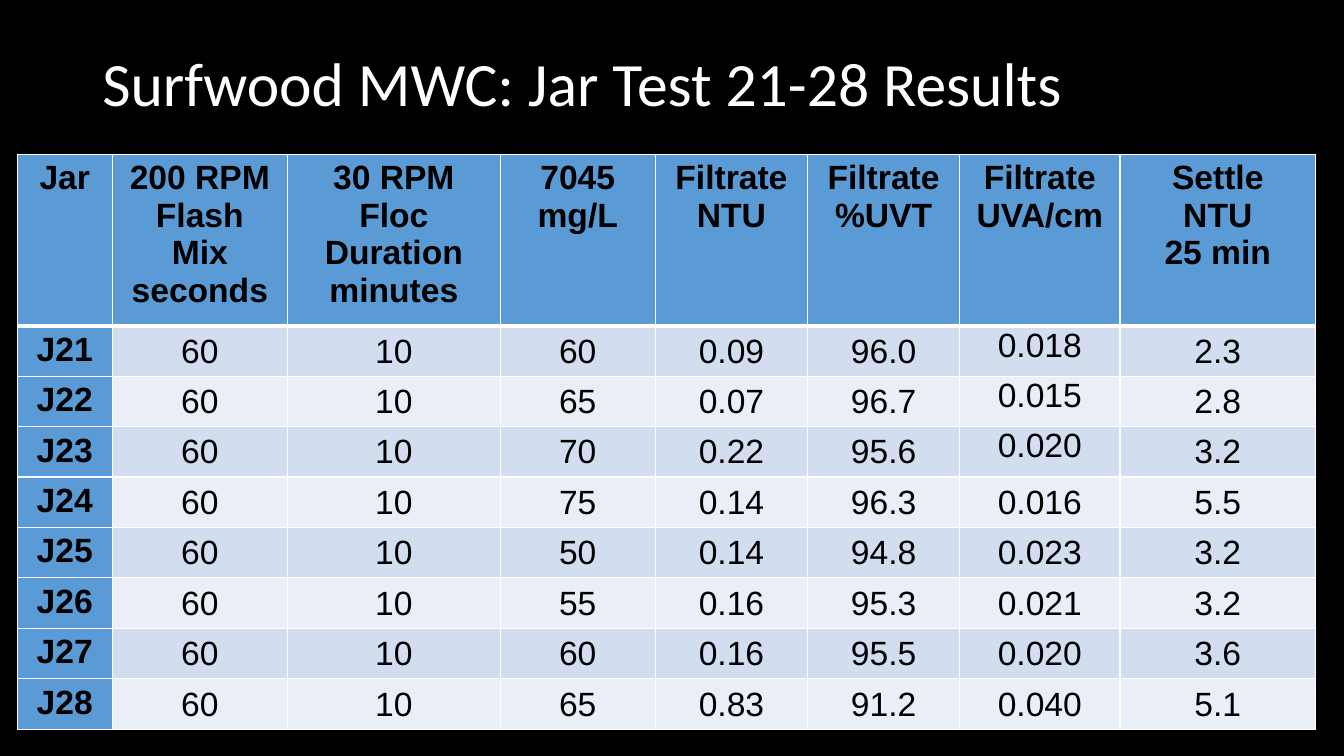
from dataclasses import dataclass

from lxml.etree import SubElement
from pptx import Presentation
from pptx.dml.color import RGBColor
from pptx.enum.text import MSO_ANCHOR, PP_ALIGN
from pptx.oxml.ns import qn
from pptx.util import Pt


@dataclass(frozen=True)
class Theme:
    back: str = "000000"
    ink: str = "000000"
    light: str = "FFFFFF"
    head: str = "5B9BD5"
    bands: tuple = ("D2DEEF", "EAEFF7")
    title_font: str = "Calibri"
    body_font: str = "Arial"
    title_size: int = 44
    body_size: int = 24


THEME = Theme()

WIDTHS = [67.7, 125.3, 151.9, 110.9, 108.7, 108.7, 114.5, 139.7]
HEAD_HIGH, ROW_HIGH = 114.4, 34

HEADS = [
    "Jar", "200 RPM\nFlash\nMix\nseconds", "30 RPM Floc\nDuration\nminutes",
    "7045\nmg/L", "Filtrate\nNTU", "Filtrate\n%UVT", "Filtrate\nUVA/cm",
    "Settle\nNTU\n25 min",
]
TESTS = [
    ("J21", "60", "10", "60", "0.09", "96.0", "0.018", "2.3"),
    ("J22", "60", "10", "65", "0.07", "96.7", "0.015", "2.8"),
    ("J23", "60", "10", "70", "0.22", "95.6", "0.020", "3.2"),
    ("J24", "60", "10", "75", "0.14", "96.3", "0.016", "5.5"),
    ("J25", "60", "10", "50", "0.14", "94.8", "0.023", "3.2"),
    ("J26", "60", "10", "55", "0.16", "95.3", "0.021", "3.2"),
    ("J27", "60", "10", "60", "0.16", "95.5", "0.020", "3.6"),
    ("J28", "60", "10", "65", "0.83", "91.2", "0.040", "5.1"),
]
UVA_COL = 6
TOP_ROWS = (1, 2, 3)  # UVA values in these rows sit at the top of the cell


def write(frame, text, *, font, size, color, bold=False,
          align=PP_ALIGN.LEFT, spacing=None):
    """Fill a text frame, one paragraph per line of text."""
    frame.text = text
    for para in frame.paragraphs:
        para.alignment = align
        if spacing:
            para.line_spacing = spacing
        for run in para.runs:
            run.font.name = font
            run.font.size = Pt(size)
            run.font.bold = bold
            run.font.color.rgb = RGBColor.from_string(color)


def edge(cell, top=1, bottom=1):
    """Draw the four cell borders, with widths in points."""
    props = cell._tc.get_or_add_tcPr()
    for side, width in zip("LRTB", (1, 1, top, bottom)):
        line = SubElement(props, qn(f"a:ln{side}"), w=str(Pt(width)))
        fill = SubElement(line, qn("a:solidFill"))
        SubElement(fill, qn("a:srgbClr"), val=THEME.light)


def paint(cell, color):
    cell.fill.solid()
    cell.fill.fore_color.rgb = RGBColor.from_string(color)


def add_title(slide, text, left, top, width, height):
    box = slide.shapes.add_textbox(Pt(left), Pt(top), Pt(width), Pt(height))
    frame = box.text_frame
    frame.word_wrap = True
    frame.vertical_anchor = MSO_ANCHOR.MIDDLE
    write(frame, text, font=THEME.title_font, size=THEME.title_size,
          color=THEME.light, spacing=0.9)


def add_results(slide, left, top):
    rows = [HEADS, *TESTS]
    high = HEAD_HIGH + ROW_HIGH * len(TESTS)
    table = slide.shapes.add_table(
        len(rows), len(HEADS), Pt(left), Pt(top), Pt(sum(WIDTHS)), Pt(high)
    ).table
    table.first_col = True
    for col, width in zip(table.columns, WIDTHS):
        col.width = Pt(width)
    for r, values in enumerate(rows):
        table.rows[r].height = Pt(ROW_HIGH if r else HEAD_HIGH)
        for c, value in enumerate(values):
            cell = table.cell(r, c)
            label = r == 0 or c == 0
            write(cell.text_frame, value, font=THEME.body_font,
                  size=THEME.body_size, color=THEME.ink, bold=label,
                  align=PP_ALIGN.CENTER)
            edge(cell, top=3 if r == 1 else 1, bottom=1 if r else 3)
            paint(cell, THEME.head if label else THEME.bands[(r - 1) % 2])
            if not label:
                cell.margin_left = cell.margin_right = Pt(0.72)
                cell.margin_top, cell.margin_bottom = Pt(0.72), Pt(0)
                high_set = c == UVA_COL and r in TOP_ROWS
                cell.vertical_anchor = (
                    MSO_ANCHOR.TOP if high_set else MSO_ANCHOR.MIDDLE)


def main():
    deck = Presentation()
    deck.slide_width, deck.slide_height = Pt(960), Pt(540)
    slide = deck.slides.add_slide(deck.slide_layouts[6])
    back = slide.background.fill
    back.solid()
    back.fore_color.rgb = RGBColor.from_string(THEME.back)
    add_title(slide, "Surfwood MWC: Jar Test 21-28 Results",
              66, 9.4, 828, 104.4)
    add_results(slide, 12.4, 110.2)
    deck.save("out.pptx")


if __name__ == "__main__":
    main()
